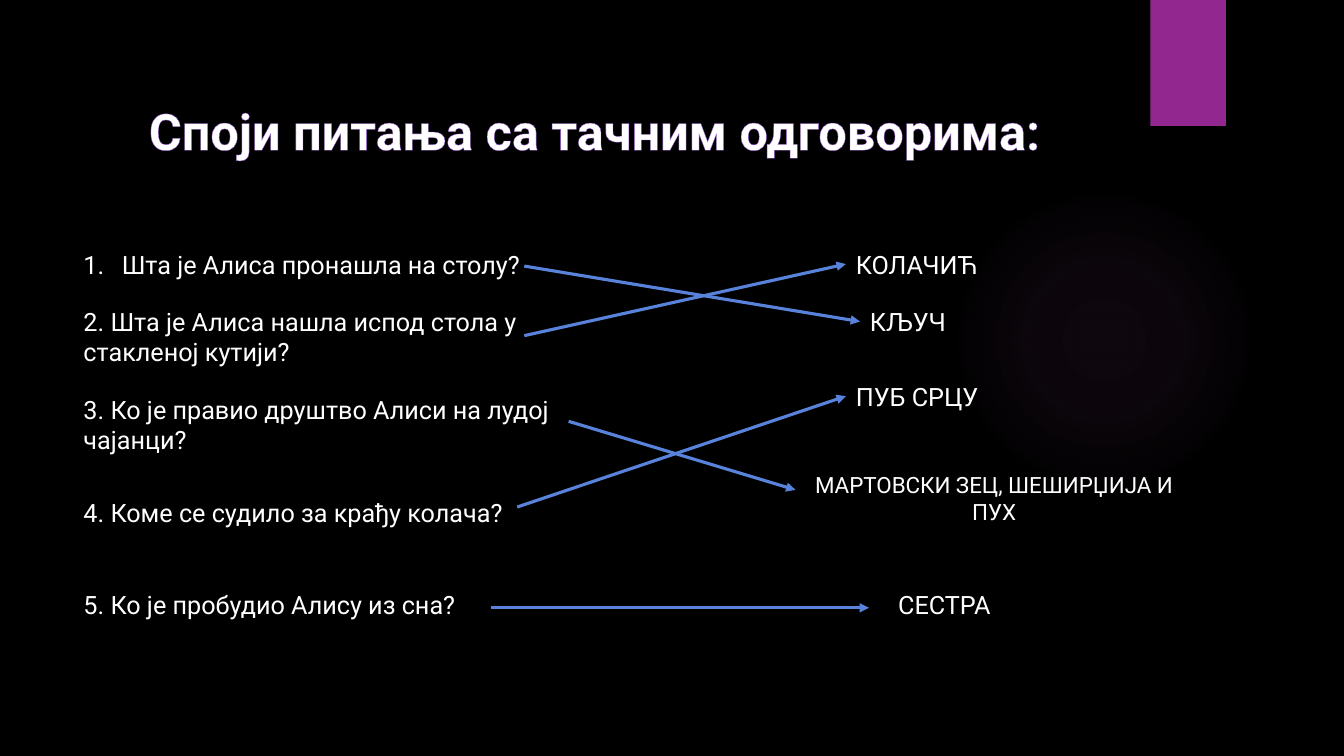
"""Build a matching quiz slide with questions, answers and arrows."""
from pptx import Presentation, util as u, oxml
from pptx.dml.color import RGBColor
from pptx.enum import shapes, text
from pptx.oxml.ns import nsdecls
from dataclasses import dataclass

TITLE = "Споји питања са тачним одговорима:"
ASKS = [
    ("Шта је Алиса пронашла на столу?", 2.42, 1),
    ("2. Шта је Алиса нашла испод стола у стакленој кутији?", 2.99, 2),
    ("3. Ко је правио друштво Алиси на лудој чајанци?", 3.86, 2),
    ("4. Коме се судило за крађу колача?", 4.88, 1),
    ("5. Ко је пробудио Алису из сна?", 5.8, 1),
]
REPLIES = [
    ("КОЛАЧИЋ", 8.39, 2.42, 1.46),
    ("КЉУЧ", 8.53, 2.99, 0.97),
    ("ПУБ СРЦУ", 8.39, 3.73, 2.71),
    ("СЕСТРА", 8.81, 5.8, 1.24),
]
GROUP = "МАРТОВСКИ ЗЕЦ, ШЕШИРЏИЈА И ПУХ"
LINKS = [
    (5.2, 2.64, 8.53, 3.19),
    (5.2, 3.33, 8.39, 2.62),
    (5.64, 4.18, 7.89, 4.86),
    (5.13, 5.03, 8.39, 3.93),
    (4.87, 6.03, 8.62, 6.03),
]
LEFT, WIDE = 0.73, 5.17
ROWS = {1: 0.4, 2: 0.71}


@dataclass(frozen=True)
class Theme:
    font: str = "Roboto"
    back: str = "000000"
    ink: str = "FFFFFF"
    tab: str = "92278F"
    glow: str = "BA69B8"
    edge: str = "9B57D3"
    link: str = "5982DB"
    head: int = 36
    body: int = 18
    small: int = 16


T = Theme()


def rgb(code):
    return RGBColor.from_string(code)


def node(xml):
    return oxml.parse_xml(xml.replace(">", f" {nsdecls('a')}>", 1)
                          if not xml.endswith("/>") or xml.count("<") > 1
                          else xml.replace("/>", f" {nsdecls('a')}/>"))


def inches(*nums):
    return [u.Inches(n) for n in nums]


def write(box, words, size=T.body, bold=False, align=text.PP_ALIGN.LEFT,
          wrap=True, number=False):
    frame = box.text_frame
    frame.word_wrap = wrap
    frame.auto_size = text.MSO_AUTO_SIZE.NONE
    frame.vertical_anchor = text.MSO_ANCHOR.TOP
    para = frame.paragraphs[0]
    para.alignment = align
    if number:
        props = para._p.get_or_add_pPr()
        props.set("marL", str(u.Inches(0.38)))
        props.set("indent", str(-u.Inches(0.38)))
        props.append(node('<a:buAutoNum type="arabicPeriod"/>'))
    run = para.add_run()
    run.text = words
    font = run.font
    font.name, font.size, font.bold = T.font, u.Pt(size), bold
    font.color.rgb = rgb(T.ink)
    return run


def block(slide, kind, at, color):
    shape = slide.shapes.add_shape(kind, *inches(*at))
    shape.shadow.inherit = False
    shape.line.fill.background()
    shape.fill.solid()
    shape.fill.fore_color.rgb = rgb(color)
    return shape


def glow(slide):
    disc = block(slide, shapes.MSO_SHAPE.OVAL, (9.41, 1.83, 3.08, 3.08), T.glow)
    stops = "".join(
        f'<a:gs pos="{pos * 1000}"><a:srgbClr val="{T.glow}">'
        f'<a:alpha val="{alpha * 1000}"/></a:srgbClr></a:gs>'
        for pos, alpha in [(0, 7), (36, 6), (69, 0), (100, 0)])
    fill = node(f'<a:gradFill><a:gsLst>{stops}</a:gsLst><a:path path="circle">'
                '<a:fillToRect l="50000" t="50000" r="50000" b="50000"/>'
                '</a:path></a:gradFill>')
    props = disc._element.spPr
    props.replace(props.find(oxml.ns.qn("a:solidFill")), fill)


def arrow(slide, ends):
    line = slide.shapes.add_connector(shapes.MSO_CONNECTOR.STRAIGHT, *inches(*ends))
    line.line.color.rgb = rgb(T.link)
    line.line.width = u.Pt(2.25)
    line.line._get_or_add_ln().append(node('<a:tailEnd type="triangle"/>'))
    line._element.spPr.append(node("<a:effectLst/>"))


def main():
    deck = Presentation()
    deck.slide_width, deck.slide_height = inches(13.33, 7.5)
    slide = deck.slides.add_slide(deck.slide_layouts[5])
    slide.background.fill.solid()
    slide.background.fill.fore_color.rgb = rgb(T.back)
    glow(slide)
    block(slide, shapes.MSO_SHAPE.RECTANGLE, (11.41, 0, 0.75, 1.25), T.tab)

    title = slide.shapes.title
    title.left, title.top, title.width, title.height = inches(1.21, 0.94, 9.38, 0.71)
    run = write(title, TITLE, size=T.head, bold=True,
                align=text.PP_ALIGN.CENTER, wrap=False)
    run.font._element.insert(0, node(
        f'<a:ln w="6600"><a:solidFill><a:srgbClr val="{T.edge}"/></a:solidFill></a:ln>'))

    for i, (words, top, rows) in enumerate(ASKS):
        box = slide.shapes.add_textbox(*inches(LEFT, top, WIDE, ROWS[rows]))
        write(box, words, number=i == 0)
    for words, left, top, wide in REPLIES:
        write(slide.shapes.add_textbox(*inches(left, top, wide, ROWS[1])), words)
    box = slide.shapes.add_textbox(*inches(7.97, 4.63, 3.78, 0.64))
    write(box, GROUP, size=T.small, align=text.PP_ALIGN.CENTER)
    for ends in LINKS:
        arrow(slide, ends)
    deck.save("out.pptx")


if __name__ == "__main__":
    main()
